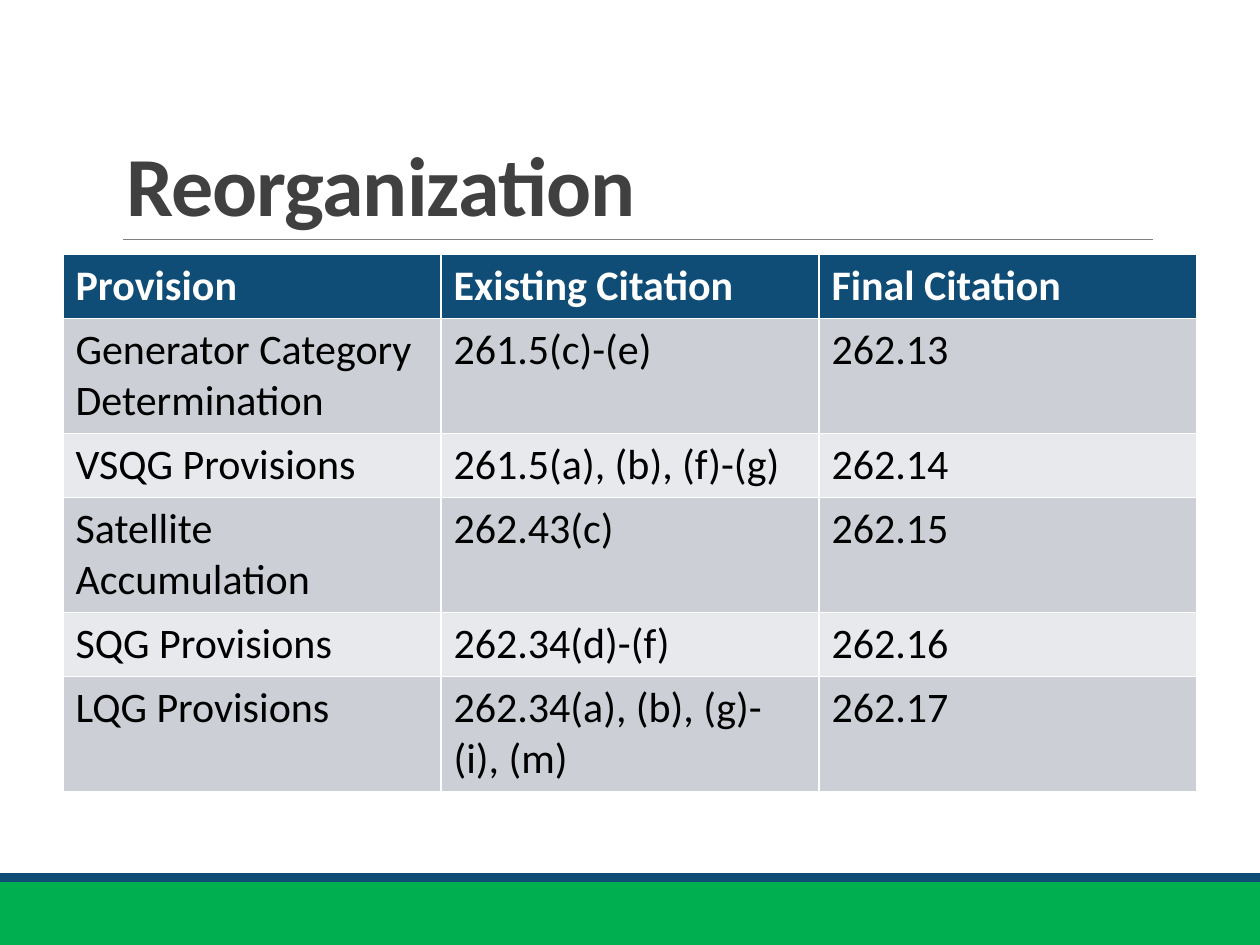
from pptx import Presentation
from pptx.dml.color import RGBColor
from pptx.enum.shapes import MSO_CONNECTOR, MSO_SHAPE
from pptx.enum.text import MSO_ANCHOR, PP_ALIGN
from pptx.oxml.ns import qn
from pptx.util import Cm, Pt
from lxml import etree

RECT = MSO_SHAPE.RECTANGLE
STRAIGHT = MSO_CONNECTOR.STRAIGHT
BOTTOM = MSO_ANCHOR.BOTTOM
LEFT = PP_ALIGN.LEFT

GREEN = RGBColor(0x00, 0xB0, 0x50)
NAVY = RGBColor(0x0F, 0x4C, 0x76)
GRAY = RGBColor(0x80, 0x80, 0x80)
DARK = RGBColor(0x40, 0x40, 0x40)
WHITE = RGBColor(0xFF, 0xFF, 0xFF)
BLACK = RGBColor(0x00, 0x00, 0x00)
BANDS = (RGBColor(0xCC, 0xD0, 0xD6), RGBColor(0xE7, 0xE9, 0xEC))

ROWS = (
    ("Provision", "Existing Citation", "Final Citation"),
    ("Generator Category Determination", "261.5(c)-(e)", "262.13"),
    ("VSQG Provisions", "261.5(a), (b), (f)-(g)", "262.14"),
    ("Satellite Accumulation", "262.43(c)", "262.15"),
    ("SQG Provisions", "262.34(d)-(f)", "262.16"),
    ("LQG Provisions", "262.34(a), (b), (g)-(i), (m)", "262.17"),
)


class Deck:
    """Holds the font and the current slide, and draws each kind of element."""

    def __init__(self, slide, font):
        self.slide = slide
        self.shapes = slide.shapes
        self.font = font

    def style(self, para, size, color, bold):
        for run in para.runs:
            font = run.font
            font.name = self.font
            font.size = Pt(size)
            font.bold = bold
            font.color.rgb = color

    def band(self, top, height, color):
        bar = self.shapes.add_shape(RECT, 0, Cm(top), Cm(25.4), Cm(height))
        bar.shadow.inherit = False
        bar.fill.solid()
        bar.fill.fore_color.rgb = color
        bar.line.fill.background()

    def rule(self, left, right, top):
        line = self.shapes.add_connector(STRAIGHT, Cm(left), Cm(top), Cm(right), Cm(top))
        line.line.color.rgb = GRAY
        line.line.width = Pt(0.5)
        etree.SubElement(line._element.spPr, qn("a:effectLst"))

    def title(self, text, left, top, width, height):
        box = self.shapes.title
        box.left, box.top = Cm(left), Cm(top)
        box.width, box.height = Cm(width), Cm(height)
        frame = box.text_frame
        frame.text = text
        frame.vertical_anchor = BOTTOM
        para = frame.paragraphs[0]
        para.alignment = LEFT
        para.line_spacing = 0.85
        self.style(para, 48, DARK, True)
        para.runs[0]._r.get_or_add_rPr().set("spc", "-50")

    def table(self, rows, left, top, width, pitch):
        grid = self.shapes.add_table(
            len(rows), len(rows[0]), Cm(left), Cm(top), Cm(width), Cm(pitch * len(rows))
        ).table
        for i, row in enumerate(rows):
            head = i == 0
            for j, text in enumerate(row):
                cell = grid.cell(i, j)
                cell.fill.solid()
                cell.fill.fore_color.rgb = NAVY if head else BANDS[(i - 1) % 2]
                cell.text_frame.text = text
                self.style(cell.text_frame.paragraphs[0], 24, WHITE if head else BLACK, head)


def main():
    prs = Presentation()
    prs.slide_width, prs.slide_height = Cm(25.4), Cm(19.05)
    deck = Deck(prs.slides.add_slide(prs.slide_layouts[5]), "Calibri")
    deck.band(17.78, 1.27, GREEN)
    deck.band(17.6, 0.18, NAVY)
    deck.rule(2.48, 23.24, 4.83)
    deck.title("Reorganization", 2.29, 0.79, 20.96, 4.04)
    deck.table(ROWS, 1.27, 5.13, 22.86, 1.03)
    prs.save("out.pptx")


if __name__ == "__main__":
    main()
